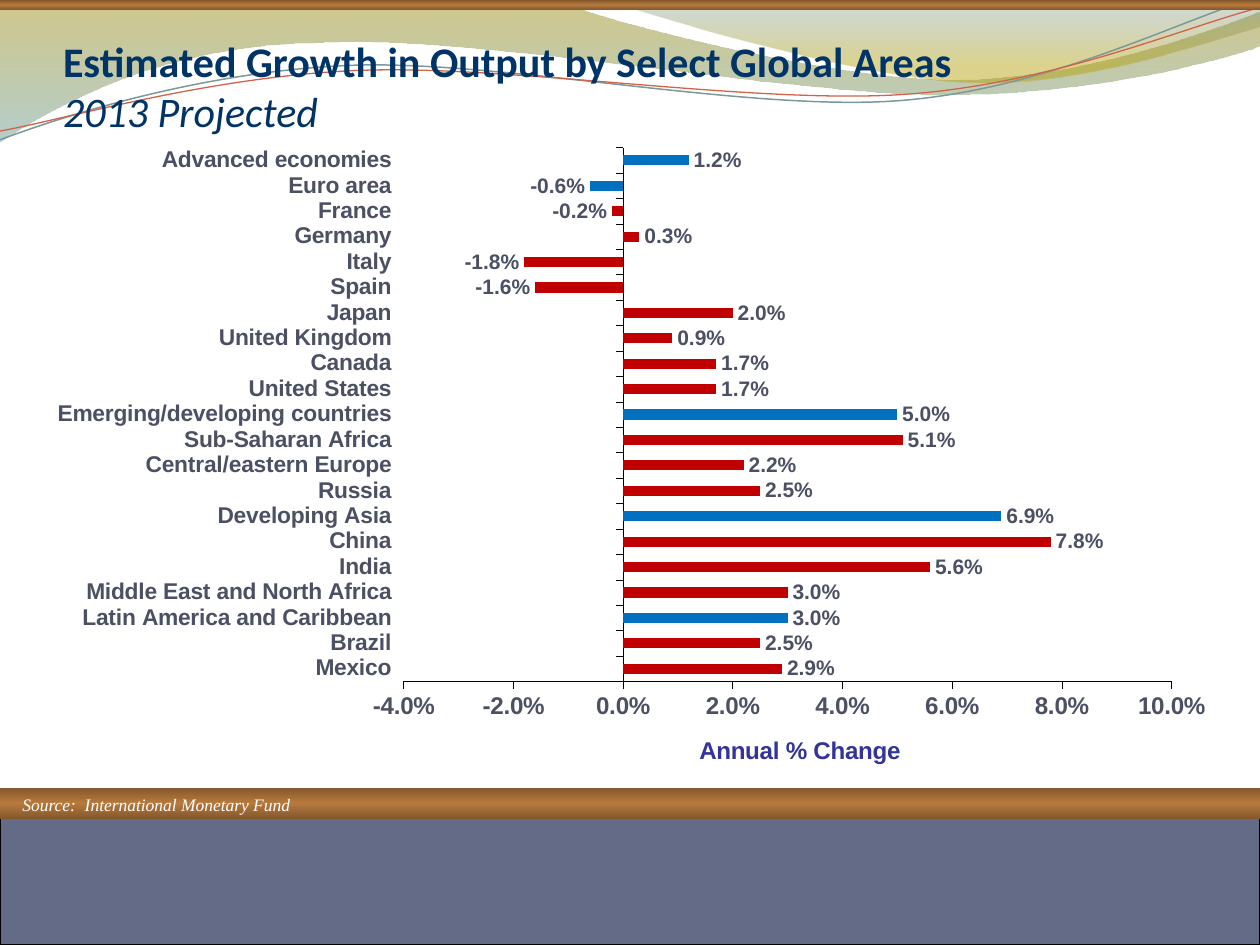
from dataclasses import dataclass
from typing import NamedTuple

from lxml import etree
from pptx import Presentation
from pptx import util as u
from pptx.chart.data import CategoryChartData
from pptx.dml.color import RGBColor
from pptx.enum import chart as charts, shapes, text
from pptx.oxml import parse_xml
from pptx.oxml.ns import nsdecls, qn

WIDTH, HEIGHT = 10, 7.5


@dataclass(frozen=True)
class Theme:
    navy: str = "003366"
    slate: str = "4B5064"
    indigo: str = "333399"
    floor: str = "646B86"
    white: str = "FFFFFF"
    black: str = "000000"
    country: str = "C00000"
    region: str = "0070C0"
    title_size: float = 24
    source_size: float = 10
    label_size: float = 12
    category_size: float = 13
    axis_size: float = 13.8


class Stop(NamedTuple):
    position: int
    color: str
    opacity: int = 100


class Wave(NamedTuple):
    start: tuple
    segments: list
    stops: tuple = ()
    line: str = ""
    weight: float = 0


class Band(NamedTuple):
    top: float
    height: float
    stops: tuple = ()


class Growth(NamedTuple):
    area: str
    rate: float
    is_region: bool = False


THEME = Theme()
COPPER = (Stop(0, "83572C"), Stop(50, "B77A3D"), Stop(100, "83572C"))
BANDS = [Band(0, 0.08, COPPER), Band(6.42, 1.08), Band(6.25, 0.25, COPPER)]
WAVES = [
    Wave((0, -0.01), [
        (4.4, -0.01), (4.76, 0.17, 6.64, 0.63, 7.58, 0.63),
        (8.53, 0.63, 9.58, 0.26, 10, 0.09), (10.01, 0.36),
        (9.83, 0.44, 8.7, 0.76, 7.46, 0.75), (6.22, 0.75, 3.82, 0.28, 2.57, 0.34),
        (1.29, 0.35, 0.46, 0.83, -0.01, 1.13),
    ], (Stop(0, "978500", 45), Stop(100, "77A5A6", 55))),
    Wave((4.79, -0.01), [
        (5.09, 0.11, 6.82, 0.62, 7.69, 0.65), (8.56, 0.69, 9.61, 0.32, 10, 0.21), (10, 0),
    ], (Stop(0, "648484", 30), Stop(80, "B49F00", 45))),
    Wave((0, 1.11), [
        (0.48, 0.93, 1.58, 0.57, 2.77, 0.52), (3.95, 0.47, 5.93, 0.89, 7.13, 0.8),
        (8.33, 0.71, 9.38, 0.15, 9.98, -0.02),
    ], line="7C999A", weight=0.85),
    Wave((0, 1.04), [
        (0.47, 0.96, 1.64, 0.61, 2.83, 0.56), (4.03, 0.51, 5.97, 0.83, 7.17, 0.75),
        (8.36, 0.67, 9.41, 0.21, 10, 0.06),
    ], line="D16349", weight=0.75),
]
GROWTH = [
    Growth("Mexico", 0.029), Growth("Brazil", 0.025),
    Growth("Latin America and Caribbean", 0.03, True),
    Growth("Middle East and North Africa", 0.03),
    Growth("India", 0.056), Growth("China", 0.078),
    Growth("Developing Asia", 0.069, True),
    Growth("Russia", 0.025), Growth("Central/eastern Europe", 0.022),
    Growth("Sub-Saharan Africa", 0.051),
    Growth("Emerging/developing countries", 0.05, True),
    Growth("United States", 0.017), Growth("Canada", 0.017),
    Growth("United Kingdom", 0.009), Growth("Japan", 0.02),
    Growth("Spain", -0.016), Growth("Italy", -0.018),
    Growth("Germany", 0.003), Growth("France", -0.002),
    Growth("Euro area", -0.006, True), Growth("Advanced economies", 0.012, True),
]


def rgb(color: str) -> RGBColor:
    return RGBColor.from_string(color)


def style(font, size: float, color: str, name: str = "Arial", bold: bool = True) -> None:
    font.size, font.name, font.bold = u.Pt(size), name, bold
    font.color.rgb = rgb(color)


def fill_gradient(shape, stops: tuple) -> None:
    marks = "".join(
        f'<a:gs pos="{stop.position * 1000}"><a:srgbClr val="{stop.color}">'
        f'<a:alpha val="{stop.opacity * 1000}"/></a:srgbClr></a:gs>' for stop in stops)
    gradient = parse_xml(f'<a:gradFill {nsdecls("a")} rotWithShape="1"><a:gsLst>{marks}'
                         '</a:gsLst><a:lin ang="5400000" scaled="0"/></a:gradFill>')
    shape.fill.background()
    old = shape.element.spPr.find(qn("a:noFill"))
    old.getparent().replace(old, gradient)


def bend(shape, segments: list) -> None:
    edges = list(shape.element.spPr.iter(qn("a:lnTo")))
    for edge, segment in zip(edges, segments):
        if len(segment) == 2:
            continue
        curve = etree.Element(qn("a:cubicBezTo"))
        for x, y in zip(segment[::2], segment[1::2]):
            point = etree.SubElement(curve, qn("a:pt"))
            point.set("x", str(u.Inches(x) - shape.left))
            point.set("y", str(u.Inches(y) - shape.top))
        edge.getparent().replace(edge, curve)


def draw_wave(page, wave: Wave) -> None:
    anchors = [(u.Inches(x), u.Inches(y))
               for x, y in [wave.start] + [segment[-2:] for segment in wave.segments]]
    builder = page.shapes.build_freeform(*anchors[0])
    builder.add_line_segments(anchors[1:], close=bool(wave.stops))
    shape = builder.convert_to_shape()
    bend(shape, wave.segments)
    shape.shadow.inherit = False
    if wave.stops:
        fill_gradient(shape, wave.stops)
        shape.line.fill.background()
    else:
        shape.fill.background()
        shape.line.color.rgb = rgb(wave.line)
        shape.line.width = u.Pt(wave.weight)


def draw_band(page, band: Band) -> None:
    shape = page.shapes.add_shape(shapes.MSO_SHAPE.RECTANGLE, 0, u.Inches(band.top),
                                  u.Inches(WIDTH), u.Inches(band.height))
    shape.shadow.inherit = False
    if band.stops:
        fill_gradient(shape, band.stops)
        shape.line.fill.background()
    else:
        shape.fill.solid()
        shape.fill.fore_color.rgb = rgb(THEME.floor)
        shape.line.color.rgb = rgb(THEME.black)
        shape.line.width = u.Pt(0.75)


def write_title(page) -> None:
    title = page.shapes.title
    title.left, title.top, title.width, title.height = map(u.Inches, (0.5, 0.5, 8.5, 0.58))
    title.element.getparent().append(title.element)
    frame = title.text_frame
    frame.auto_size, frame.word_wrap = text.MSO_AUTO_SIZE.NONE, True
    frame.vertical_anchor = text.MSO_ANCHOR.BOTTOM
    frame.margin_left = frame.margin_right = frame.margin_bottom = 0
    para = frame.paragraphs[0]
    para.alignment = text.PP_ALIGN.LEFT
    heading = para.add_run()
    heading.text = "Estimated Growth in Output by Select Global Areas"
    para.add_line_break()
    subtitle = para.add_run()
    subtitle.text = "2013 Projected"
    for span in (heading, subtitle):
        style(span.font, THEME.title_size, THEME.navy, "Calibri", span is heading)
    subtitle.font.italic = True


def write_source(page) -> None:
    box = page.shapes.add_textbox(*map(u.Inches, (0.08, 6.25, 2.36, 0.27)))
    box.text_frame.word_wrap = False
    para = box.text_frame.paragraphs[0]
    para.text = "Source:  International Monetary Fund"
    style(para.font, THEME.source_size, THEME.white, "Times New Roman", False)
    para.font.italic = True


def place(parent, index: int, **shares) -> None:
    for old in parent.findall(qn("c:layout")):
        parent.remove(old)
    layout = etree.Element(qn("c:layout"))
    manual = etree.SubElement(layout, qn("c:manualLayout"))
    for tag, value in shares.items():
        etree.SubElement(manual, qn(f"c:{tag}")).set("val", str(value))
    parent.insert(index, layout)


def draw_chart(page) -> None:
    data = CategoryChartData(number_format="0.0%")
    data.categories = [growth.area for growth in GROWTH]
    data.add_series("Series 1", [growth.rate for growth in GROWTH])
    chart = page.shapes.add_chart(charts.XL_CHART_TYPE.BAR_CLUSTERED,
                                  *map(u.Inches, (0.25, 1.17, 9.75, 5.04)), data).chart
    chart.has_legend = chart.has_title = False
    style(chart.font, THEME.label_size, THEME.slate)

    for axis, size in ((chart.category_axis, THEME.category_size),
                       (chart.value_axis, THEME.axis_size)):
        style(axis.tick_labels.font, size, THEME.slate)
        axis.has_major_gridlines = False
        axis.major_tick_mark = charts.XL_TICK_MARK.OUTSIDE
        axis.format.line.color.rgb = rgb(THEME.black)
        axis.format.line.width = u.Pt(0.25)
    chart.category_axis.tick_label_position = charts.XL_TICK_LABEL_POSITION.LOW
    values = chart.value_axis
    values.minimum_scale, values.maximum_scale, values.major_unit = -0.04, 0.1, 0.02
    values.tick_labels.number_format = "0.0%"
    values.tick_labels.number_format_is_linked = False
    para = values.axis_title.text_frame.paragraphs[0]
    para.text = "Annual % Change"
    style(para.font, THEME.axis_size, THEME.indigo)
    place(values.axis_title._element, 1, xMode="edge", yMode="edge", x=0.54, y=0.92)

    plot = chart.plots[0]
    plot.gap_width, plot.vary_by_categories = 150, False
    place(chart._chartSpace.chart.plotArea, 0, layoutTarget="inner", xMode="edge",
          yMode="edge", x=0.303, y=0, w=0.625, h=0.841)
    series = plot.series[0]
    series.invert_if_negative = False
    series.format.fill.solid()
    series.format.fill.fore_color.rgb = rgb(THEME.country)
    for index, growth in enumerate(GROWTH):
        if growth.is_region:
            fill = series.points[index].format.fill
            fill.solid()
            fill.fore_color.rgb = rgb(THEME.region)
    labels = series.data_labels
    labels.show_value = True
    labels.number_format, labels.number_format_is_linked = "0.0%", False
    labels.position = charts.XL_LABEL_POSITION.OUTSIDE_END
    style(labels.font, THEME.label_size, THEME.slate)


def main() -> None:
    deck = Presentation()
    deck.slide_width, deck.slide_height = u.Inches(WIDTH), u.Inches(HEIGHT)
    page = deck.slides.add_slide(deck.slide_layouts[5])
    for wave in WAVES:
        draw_wave(page, wave)
    for band in BANDS:
        draw_band(page, band)
    write_title(page)
    write_source(page)
    draw_chart(page)
    deck.save("out.pptx")


if __name__ == "__main__":
    main()
